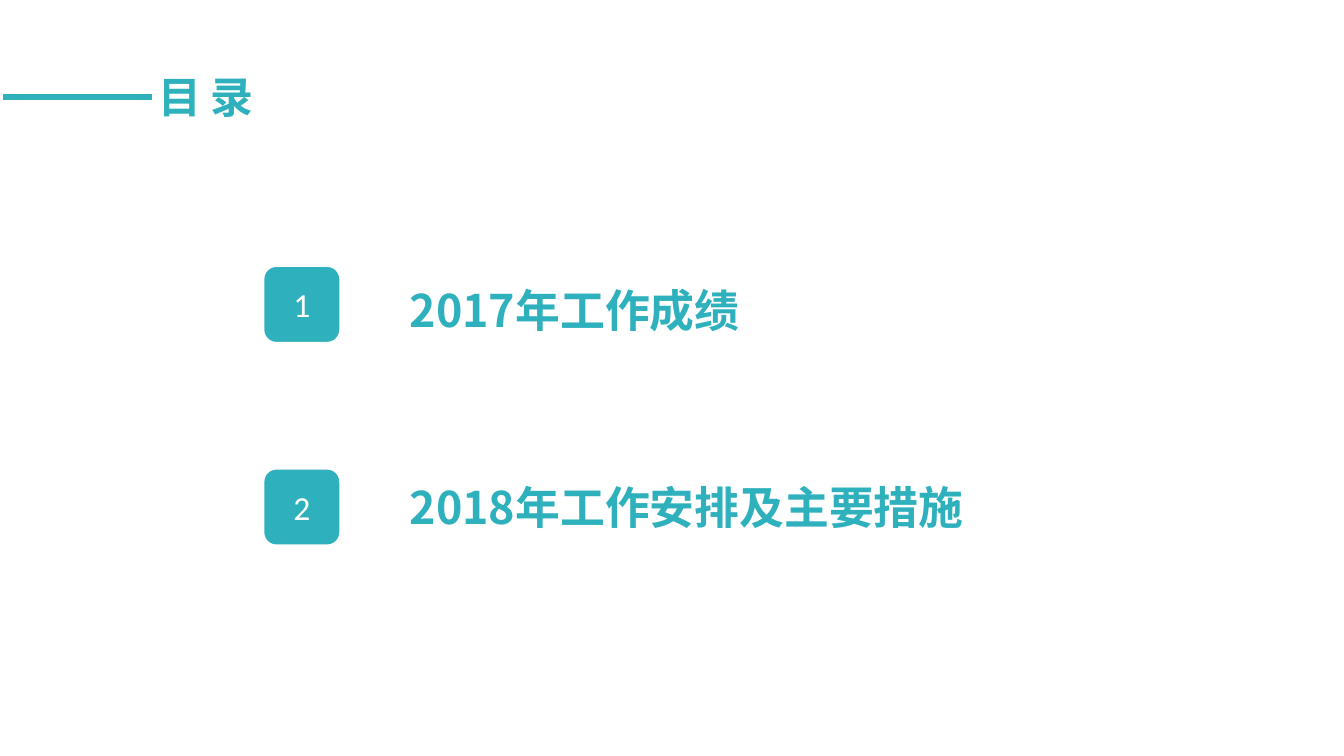
import lxml.etree
import pptx
import pptx.dml.color
import pptx.enum.shapes
import pptx.enum.text
import pptx.oxml.ns
import pptx.util
from pptx.util import Cm

TEAL = pptx.dml.color.RGBColor(0x2E, 0xB0, 0xBD)
WHITE = pptx.dml.color.RGBColor(0xFF, 0xFF, 0xFF)
LATIN_FONT = "Calibri"
CHINESE_FONT = "Noto Sans CJK SC"
BADGE_SIZE = Cm(1.45)

ENTRIES = [
    (Cm(5.03), Cm(5.21), Cm(6.83), [("2017年工作成绩", CHINESE_FONT)]),
    (Cm(8.86), Cm(8.94), Cm(11.07),
     [("2018", CHINESE_FONT), ("年工作安排及主要措施", LATIN_FONT)]),
]


def place(shape, left, top, width, height):
    """Move and size a shape."""
    shape.left, shape.top, shape.width, shape.height = left, top, width, height


def format_paragraph(paragraph, size, color, bold, alignment):
    """Set the shared font and alignment of a paragraph."""
    paragraph.alignment = alignment
    paragraph.font.size = pptx.util.Pt(size)
    paragraph.font.bold = bold
    paragraph.font.name = LATIN_FONT
    paragraph.font.color.rgb = color


def fill_title(title):
    """Write the slide heading in the title placeholder."""
    place(title, Cm(2.84), Cm(1.27), Cm(2.3), Cm(1.12))
    frame = title.text_frame
    frame.text = "目 录"
    frame.word_wrap = False
    frame.auto_size = pptx.enum.text.MSO_AUTO_SIZE.NONE
    frame.margin_left = Cm(0.15)
    frame.margin_right = Cm(0)
    frame.margin_top = frame.margin_bottom = Cm(0.08)
    format_paragraph(frame.paragraphs[0], 23, TEAL, True, pptx.enum.text.PP_ALIGN.LEFT)


def fill_entry(placeholder, top, width, runs):
    """Write one contents entry in a body placeholder."""
    place(placeholder, Cm(7.49), top, width, Cm(1.27))
    frame = placeholder.text_frame
    frame.word_wrap = True
    frame.auto_size = pptx.enum.text.MSO_AUTO_SIZE.NONE
    frame.vertical_anchor = pptx.enum.text.MSO_ANCHOR.TOP
    paragraph = frame.paragraphs[0]
    paragraph.space_before = pptx.util.Pt(0)
    format_paragraph(paragraph, 24, TEAL, True, pptx.enum.text.PP_ALIGN.LEFT)
    properties = paragraph._p.get_or_add_pPr()
    properties.set("marL", "0")
    properties.set("indent", "0")
    properties.insert_element_before(
        properties.makeelement(pptx.oxml.ns.qn("a:buNone")), "a:tabLst", "a:defRPr")
    for text, font_name in runs:
        run = paragraph.add_run()
        run.text = text
        run.font.name = font_name


def add_badge(slide, number, top):
    """Add a numbered rounded square."""
    badge = slide.shapes.add_shape(
        pptx.enum.shapes.MSO_SHAPE.ROUNDED_RECTANGLE, Cm(4.98), top, BADGE_SIZE, BADGE_SIZE)
    badge.shadow.inherit = False
    badge.fill.solid()
    badge.fill.fore_color.rgb = TEAL
    badge.line.color.rgb = WHITE
    badge.line.width = pptx.util.Pt(1)
    frame = badge.text_frame
    frame.text = str(number)
    frame.vertical_anchor = pptx.enum.text.MSO_ANCHOR.MIDDLE
    format_paragraph(frame.paragraphs[0], 18, WHITE, False, pptx.enum.text.PP_ALIGN.CENTER)


def add_title_rule(slide):
    """Add the line leading to the title."""
    rule = slide.shapes.add_connector(
        pptx.enum.shapes.MSO_CONNECTOR.STRAIGHT, Cm(0.05), Cm(1.83), Cm(2.87), Cm(1.83))
    rule.line.color.rgb = TEAL
    rule.line.width = pptx.util.Pt(3)
    lxml.etree.SubElement(rule._element.spPr, pptx.oxml.ns.qn("a:effectLst"))


def main():
    """Build and save the contents slide."""
    presentation = pptx.Presentation()
    presentation.slide_width = Cm(25.4)
    presentation.slide_height = Cm(14.29)
    slide = presentation.slides.add_slide(presentation.slide_layouts.get_by_name("Two Content"))
    title, *bodies = slide.placeholders
    fill_title(title)
    add_title_rule(slide)
    for number, (body, entry) in enumerate(zip(bodies, ENTRIES), 1):
        badge_top, text_top, width, runs = entry
        add_badge(slide, number, badge_top)
        fill_entry(body, text_top, width, runs)
    presentation.save("out.pptx")


if __name__ == "__main__":
    main()
